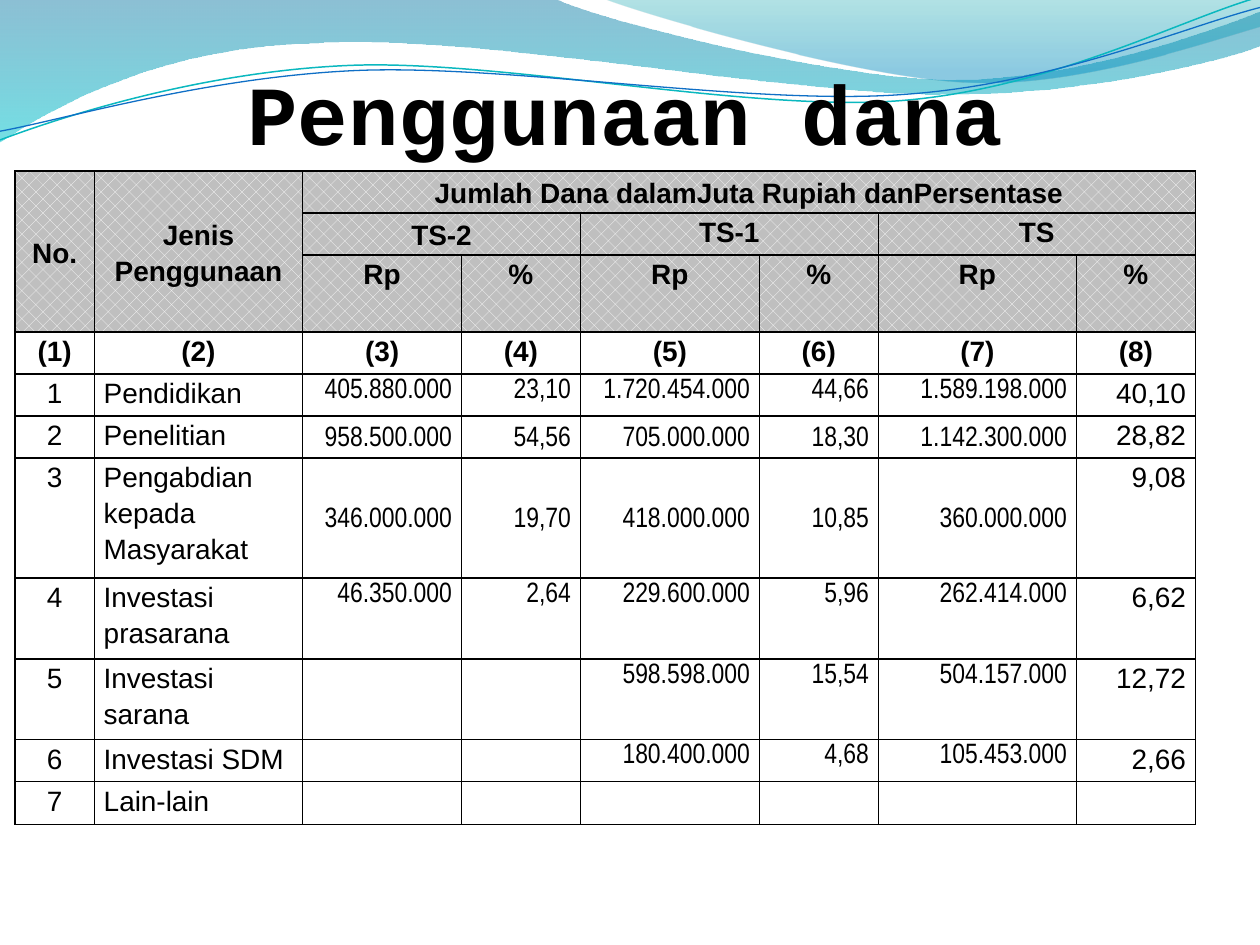
import math

import lxml.etree
import pptx
import pptx.dml.color
import pptx.enum.dml
import pptx.enum.text
import pptx.oxml
import pptx.oxml.ns
import pptx.util

Pt = pptx.util.Pt
qn = pptx.oxml.ns.qn
ALIGN = pptx.enum.text.PP_ALIGN
ANCHOR = pptx.enum.text.MSO_ANCHOR

# Outlines in points: a pair is a straight line, six numbers are a Bezier curve
LEFT_WAVE = [
    (0, 0), (317, -0.7),
    (343, 12, 478, 45.4, 546, 45.4), (614, 45.4, 690, 18.7, 720, 6.5),
    (720.7, 26),
    (708, 31.7, 626, 54.7, 537, 54), (448, 54, 275, 20.2, 185, 24.5),
    (93, 26, 33, 59.8, -0.7, 81.4), (0, 0),
]
RIGHT_WAVE = [
    (345, -0.7),
    (366.5, 8, 491, 44.6, 553.7, 46.8), (616.3, 49.7, 692, 23, 720, 15.1),
    (720, 0), (345, -0.7),
]
TEAL_LINE = [
    (0, 80),
    (34.6, 67, 113.8, 41, 199.4, 37.4), (284.4, 33.8, 427, 64, 513.4, 57.6),
    (599.8, 51.1, 675.4, 10.8, 718.6, -1.4),
]
BLUE_LINE = [
    (0, 75),
    (33.8, 69, 118, 44, 203.8, 40.3), (290.2, 36.7, 429.8, 60.5, 516.2, 54),
    (602, 48.2, 677.5, 15.1, 720, 4.3),
]
LINE_ROTATION = 357.3

COLUMN_WIDTHS = [45.3, 119.1, 90.7, 68, 102.3, 68, 113.2, 68]
ROW_HEIGHTS = [24, 24, 44.1, 24, 24, 24, 68.6, 46.2, 46.2, 24, 24.4]
HEADER_ROWS = 3
MERGES = [(0, 0, 2, 0), (0, 1, 2, 1), (0, 2, 0, 7),
          (1, 2, 1, 3), (1, 4, 1, 5), (1, 6, 1, 7)]
MIDDLE_HEADERS = [(0, 0), (0, 1), (0, 2), (1, 2)]
MIDDLE_ROWS = [5, 6]
ROWS = [
    ["No.", "Jenis Penggunaan", "Jumlah Dana dalamJuta Rupiah danPersentase"] + [""] * 5,
    ["", "", "TS-2", "", "TS-1", "", "TS", ""],
    ["", ""] + ["Rp", "%"] * 3,
    [f"({number})" for number in range(1, 9)],
    ["1", "Pendidikan", "405.880.000", "23,10", "1.720.454.000", "44,66", "1.589.198.000", "40,10"],
    ["2", "Penelitian", "958.500.000", "54,56", "705.000.000", "18,30", "1.142.300.000", "28,82"],
    ["3", "Pengabdian kepada Masyarakat", "346.000.000", "19,70", "418.000.000", "10,85",
     "360.000.000", "9,08"],
    ["4", "Investasi prasarana", "46.350.000", "2,64", "229.600.000", "5,96", "262.414.000", "6,62"],
    ["5", "Investasi sarana", "", "", "598.598.000", "15,54", "504.157.000", "12,72"],
    ["6", "Investasi SDM", "", "", "180.400.000", "4,68", "105.453.000", "2,66"],
    ["7", "Lain-lain"] + [""] * 6,
]


def color(value):
    return pptx.dml.color.RGBColor.from_string(value)


def write_text(frame, text, font="Arial", size=16, bold=False, align=ALIGN.LEFT, spacing=1.0):
    paragraph = frame.paragraphs[0]
    paragraph.alignment = align
    paragraph.line_spacing = spacing
    run = paragraph.add_run()
    run.text = text
    run.font.name = font
    run.font.size = Pt(size)
    run.font.bold = bold
    run.font.color.rgb = color("000000")


def rotate_outline(outline, degrees, center):
    cosine, sine = math.cos(math.radians(degrees)), math.sin(math.radians(degrees))
    rotated = []
    for segment in outline:
        values = []
        for x, y in zip(segment[::2], segment[1::2]):
            across, down = x - center[0], y - center[1]
            values += [center[0] + across * cosine - down * sine,
                       center[1] + across * sine + down * cosine]
        rotated.append(tuple(values))
    return rotated


def add_outline(slide, outline, closed):
    """Build a polygon through all points, then join its points into curves."""
    points = [(Pt(x), Pt(y)) for segment in outline
              for x, y in zip(segment[::2], segment[1::2])]
    builder = slide.shapes.build_freeform(*points[0])
    builder.add_line_segments(points[1:], close=closed)
    shape = builder.convert_to_shape()
    shape.shadow.inherit = False
    lines = list(shape.element.iter(qn("a:lnTo")))
    for segment in outline[1:]:
        first = lines.pop(0)
        if len(segment) == 6:
            first.tag = qn("a:cubicBezTo")
            for line in (lines.pop(0), lines.pop(0)):
                first.append(line[0])
                line.getparent().remove(line)
    return shape


def add_wave(slide, outline, stops):
    """Each stop is position, colour and opacity in percent."""
    shape = add_outline(slide, outline, closed=True)
    shape.line.fill.background()
    shape.fill.gradient()
    shape.fill.gradient_angle = 270
    for stop, (position, value, opacity) in zip(shape.fill.gradient_stops, stops):
        stop.position = position
        stop.color.rgb = color(value)
    for element, (position, value, opacity) in zip(
            shape.element.spPr.iter(qn("a:srgbClr")), stops):
        alpha = lxml.etree.SubElement(element, qn("a:alpha"))
        alpha.set("val", str(opacity * 1000))


def add_wave_line(slide, outline, center, value, width):
    level_outline = rotate_outline(outline, -LINE_ROTATION, center)
    shape = add_outline(slide, level_outline, closed=False)
    shape.rotation = LINE_ROTATION
    shape.fill.background()
    shape.line.color.rgb = color(value)
    shape.line.width = Pt(width)


def add_title(slide, text):
    title = slide.shapes.title
    title.left, title.top, title.width, title.height = Pt(8.6), Pt(31.7), Pt(697.7), Pt(65.5)
    frame = title.text_frame
    frame.margin_top, frame.margin_bottom = 0, Pt(4.4)
    frame.vertical_anchor = ANCHOR.BOTTOM
    write_text(frame, text, font="Courier New", size=48, bold=True, align=ALIGN.CENTER)
    # Bring the title in front of the waves
    slide.shapes.element.append(title.element)


def set_borders(cell, value, width):
    properties = cell._tc.get_or_add_tcPr()
    for side in ("lnL", "lnR", "lnT", "lnB"):
        properties.append(pptx.oxml.parse_xml(
            f'<a:{side} {pptx.oxml.ns.nsdecls("a")} w="{Pt(width)}">'
            f'<a:solidFill><a:srgbClr val="{value}"/></a:solidFill></a:{side}>'))


def format_cell(cell, row, column, text):
    is_amount = row > HEADER_ROWS and 2 <= column <= 6
    set_borders(cell, "000000", 1)
    cell.margin_left = cell.margin_right = Pt(5.4)
    cell.margin_top = cell.margin_bottom = 0
    is_middle = (row, column) in MIDDLE_HEADERS or (is_amount and row in MIDDLE_ROWS)
    cell.vertical_anchor = ANCHOR.MIDDLE if is_middle else ANCHOR.TOP
    if row < HEADER_ROWS:
        cell.fill.patterned()
        cell.fill.pattern = pptx.enum.dml.MSO_PATTERN.PERCENT_25
        cell.fill.fore_color.rgb = color("FFFFFF")
        cell.fill.back_color.rgb = color("BFBFBF")
    else:
        cell.fill.background()
    if text:
        if row <= HEADER_ROWS or column == 0:
            align = ALIGN.CENTER
        else:
            align = ALIGN.LEFT if column == 1 else ALIGN.RIGHT
        write_text(cell.text_frame, text, font="Arial Narrow" if is_amount else "Arial",
                   bold=row <= HEADER_ROWS, align=align, spacing=1.15)


def add_fund_table(slide):
    table = slide.shapes.add_table(
        len(ROWS), len(COLUMN_WIDTHS), Pt(8.6), Pt(97.7),
        Pt(sum(COLUMN_WIDTHS)), Pt(sum(ROW_HEIGHTS))).table
    table.first_row = table.horz_banding = False
    for column, width in zip(table.columns, COLUMN_WIDTHS):
        column.width = Pt(width)
    for row, height in zip(table.rows, ROW_HEIGHTS):
        row.height = Pt(height)
    for top, left, bottom, right in MERGES:
        table.cell(top, left).merge(table.cell(bottom, right))
    for row, texts in enumerate(ROWS):
        for column, text in enumerate(texts):
            format_cell(table.cell(row, column), row, column, text)


def main():
    presentation = pptx.Presentation()
    presentation.slide_width, presentation.slide_height = Pt(720), Pt(540)
    slide = presentation.slides.add_slide(presentation.slide_layouts[5])
    # Wave decoration
    add_wave(slide, LEFT_WAVE, [(0, "0074A1", 45), (1, "00C6CF", 55)])
    add_wave(slide, RIGHT_WAVE, [(0, "00A1A9", 30), (0.8, "008BBF", 45)])
    add_wave_line(slide, TEAL_LINE, (359.3, 41.4), "0AB8BF", 0.85)
    add_wave_line(slide, BLUE_LINE, (359.6, 42.5), "0F6FC6", 0.75)
    # Title and table
    add_title(slide, "Penggunaan dana")
    add_fund_table(slide)
    presentation.save("out.pptx")


if __name__ == "__main__":
    main()
